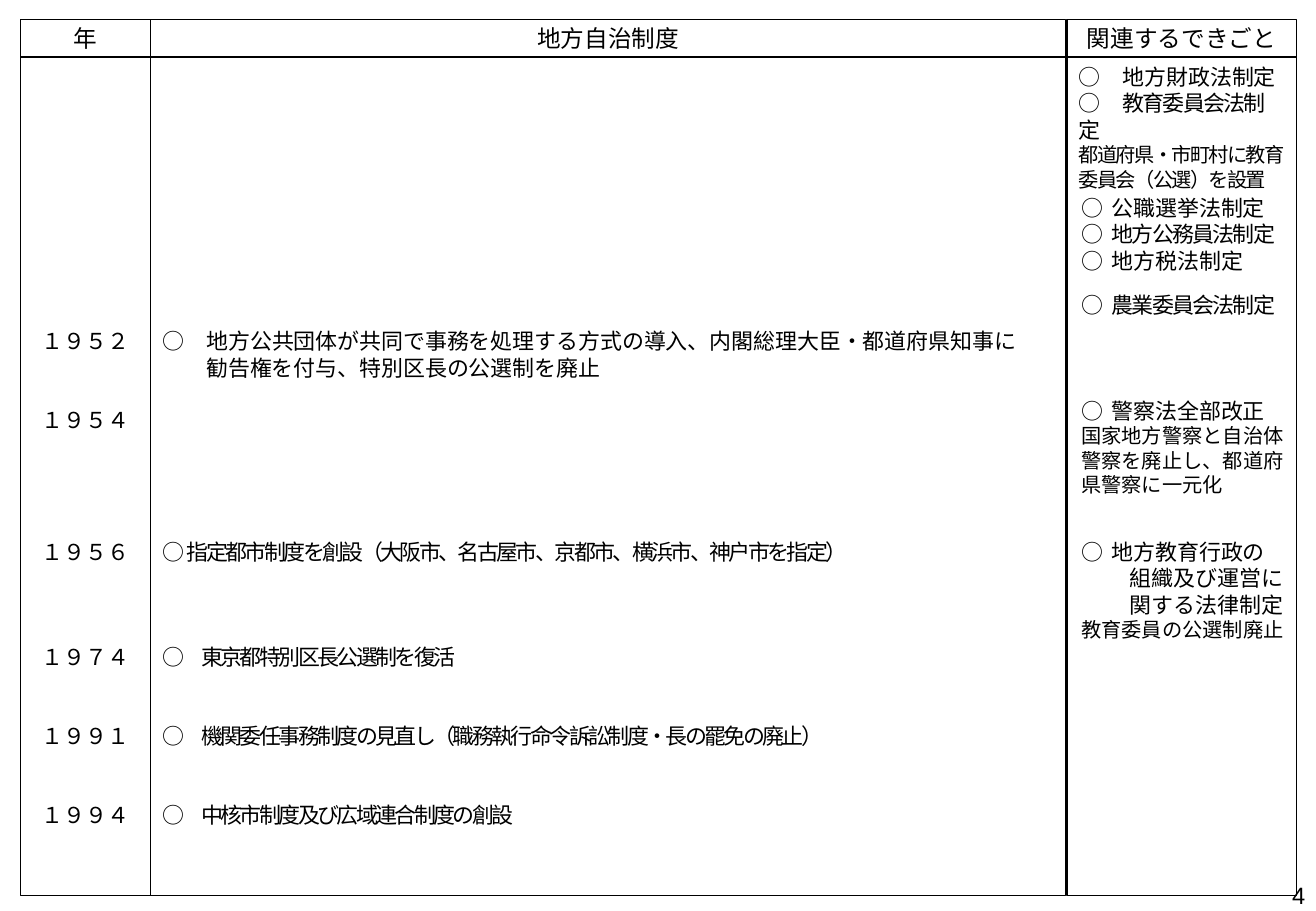
from dataclasses import dataclass

from lxml import etree
from pptx import Presentation
from pptx.dml.color import RGBColor
from pptx.enum.shapes import MSO_SHAPE
from pptx.enum.text import MSO_ANCHOR, PP_ALIGN
from pptx.oxml.ns import qn
from pptx.util import Inches, Pt

BLACK = RGBColor(0, 0, 0)
RECTANGLE = MSO_SHAPE.RECTANGLE
TOP, MIDDLE = MSO_ANCHOR.TOP, MSO_ANCHOR.MIDDLE
LEFT, CENTER, RIGHT = PP_ALIGN.LEFT, PP_ALIGN.CENTER, PP_ALIGN.RIGHT
JAPANESE_FONT = "Noto Sans CJK JP"

HEADER_TOP, HEADER_HEIGHT = 0.16, 0.31
BODY_TOP, BODY_HEIGHT = 0.47, 6.9
COLUMNS = [
    ("年", 0.17, 1.07),
    ("地方自治制度", 1.24, 7.53),
    ("関連するできごと", 8.78, 1.89),
]
YEAR_TOPS = {
    "１９５２": 2.65,
    "１９５４": 3.3,
    "１９５６": 4.38,
    "１９７４": 5.25,
    "１９９１": 5.9,
    "１９９４": 6.55,
}


@dataclass
class Line:
    text: str
    marker: str = ""
    spacing: float = 0
    size: int = 13
    indent: float = 0
    hanging: float = 0
    before: float = 0
    font: str = JAPANESE_FONT


def listed(text, spacing=0, before=0, hanging=0.25):
    """An item whose text follows its circle at a short tab."""
    return Line(text, "○\t", spacing, indent=hanging, hanging=hanging, before=before)


# Entries: top, lines
SYSTEM_ENTRIES = [
    (YEAR_TOPS["１９５２"], [
        Line("地方公共団体が共同で事務を処理する方式の導入、内閣総理大臣・都道府県知事に", "○　"),
        Line("勧告権を付与、特別区長の公選制を廃止", indent=0.36),
    ]),
    (YEAR_TOPS["１９５６"], [
        listed("指定都市制度を創設（大阪市、名古屋市、京都市、横浜市、神戸市を指定）", -1.5, hanging=0.2),
    ]),
    (YEAR_TOPS["１９７４"], [Line("○　東京都特別区長公選制を復活", spacing=-1.5)]),
    (YEAR_TOPS["１９９１"], [
        Line("○　機関委任事務制度の見直し（職務執行命令訴訟制度・長の罷免の廃止）", spacing=-1.5),
    ]),
    (YEAR_TOPS["１９９４"], [Line("○　中核市制度及び広域連合制度の創設", spacing=-1.5)]),
]
EVENT_ENTRIES = [
    (1.55, [
        listed("公職選挙法制定"),
        listed("地方公務員法制定", -1),
        listed("地方税法制定"),
        listed("農業委員会法制定", -1, before=10.5),
    ]),
    (3.22, [
        listed("警察法全部改正"),
        Line("国家地方警察と自治体警察を廃止し、都道府県警察に一元化", size=12),
    ]),
    (YEAR_TOPS["１９５６"], [
        listed("地方教育行政の"),
        Line("組織及び運営に", indent=0.4),
        Line("関する法律制定", indent=0.4),
        Line("教育委員の公選制廃止", size=12),
    ]),
]
FIRST_EVENTS = [
    Line("地方財政法制定", "○　"),
    Line("教育委員会法制定", "○　", -1),
    Line("都道府県・市町村に教育委員会（公選）を設置", spacing=-1, size=12),
]


def add_span(para, text, line, spacing):
    span = para.add_run()
    span.text = text
    span.font.size = Pt(line.size)
    span.font.name = line.font
    span.font.color.rgb = BLACK
    properties = span.font._element
    etree.SubElement(properties, qn("a:ea")).set("typeface", JAPANESE_FONT)
    if spacing:
        properties.set("spc", str(int(spacing * 100)))


def write_lines(box, lines, align=LEFT, anchor=TOP):
    frame = box.text_frame
    frame.word_wrap = True
    frame.vertical_anchor = anchor
    for index, line in enumerate(lines):
        para = frame.paragraphs[0] if index == 0 else frame.add_paragraph()
        para.alignment = align
        para.line_spacing = Pt(round(line.size * 1.205, 1))
        para.space_before = Pt(line.before)
        properties = para._p.get_or_add_pPr()
        properties.set("marL", str(Inches(line.indent)))
        properties.set("indent", str(-Inches(line.hanging)))
        if line.marker:
            add_span(para, line.marker, line, 0)
        add_span(para, line.text, line, line.spacing)


def add_cell(page, left, top, width, height):
    cell = page.shapes.add_shape(
        RECTANGLE, Inches(left), Inches(top), Inches(width), Inches(height))
    cell.shadow.inherit = False
    cell.fill.background()
    cell.line.color.rgb = BLACK
    cell.line.width = Pt(0.75)
    return cell


def add_text(page, left, top, width, height, lines, align=LEFT, anchor=TOP):
    box = page.shapes.add_textbox(
        Inches(left), Inches(top), Inches(width), Inches(height))
    write_lines(box, lines, align, anchor)


def add_entries(page, left, width, entries):
    for top, lines in entries:
        add_text(page, left, top, width, 0.1 + 0.22 * len(lines), lines)


def main():
    deck = Presentation()
    deck.slide_width, deck.slide_height = Inches(10.83), Inches(7.5)
    page = deck.slides.add_slide(deck.slide_layouts[6])

    # Column frames and headings
    bodies = []
    for heading, left, width in COLUMNS:
        bodies.append(add_cell(page, left, BODY_TOP, width, BODY_HEIGHT))
        header = add_cell(page, left, HEADER_TOP, width, HEADER_HEIGHT)
        write_lines(header, [Line(heading, size=14, font="Calibri")], CENTER, MIDDLE)
    write_lines(bodies[2], FIRST_EVENTS)

    # Years
    year_left, year_width = COLUMNS[0][1:]
    for year, top in YEAR_TOPS.items():
        add_text(page, year_left, top, year_width, 0.32, [Line(year, font="Arial")], CENTER)

    # Reforms and related events
    add_entries(page, 1.24, 7.56, SYSTEM_ENTRIES)
    add_entries(page, 8.8, 1.92, EVENT_ENTRIES)

    # Page number
    add_text(page, 8.31, 7.24, 2.53, 0.26, [Line("4", size=14, font="Arial")], RIGHT, MIDDLE)

    deck.save("out.pptx")


if __name__ == "__main__":
    main()
